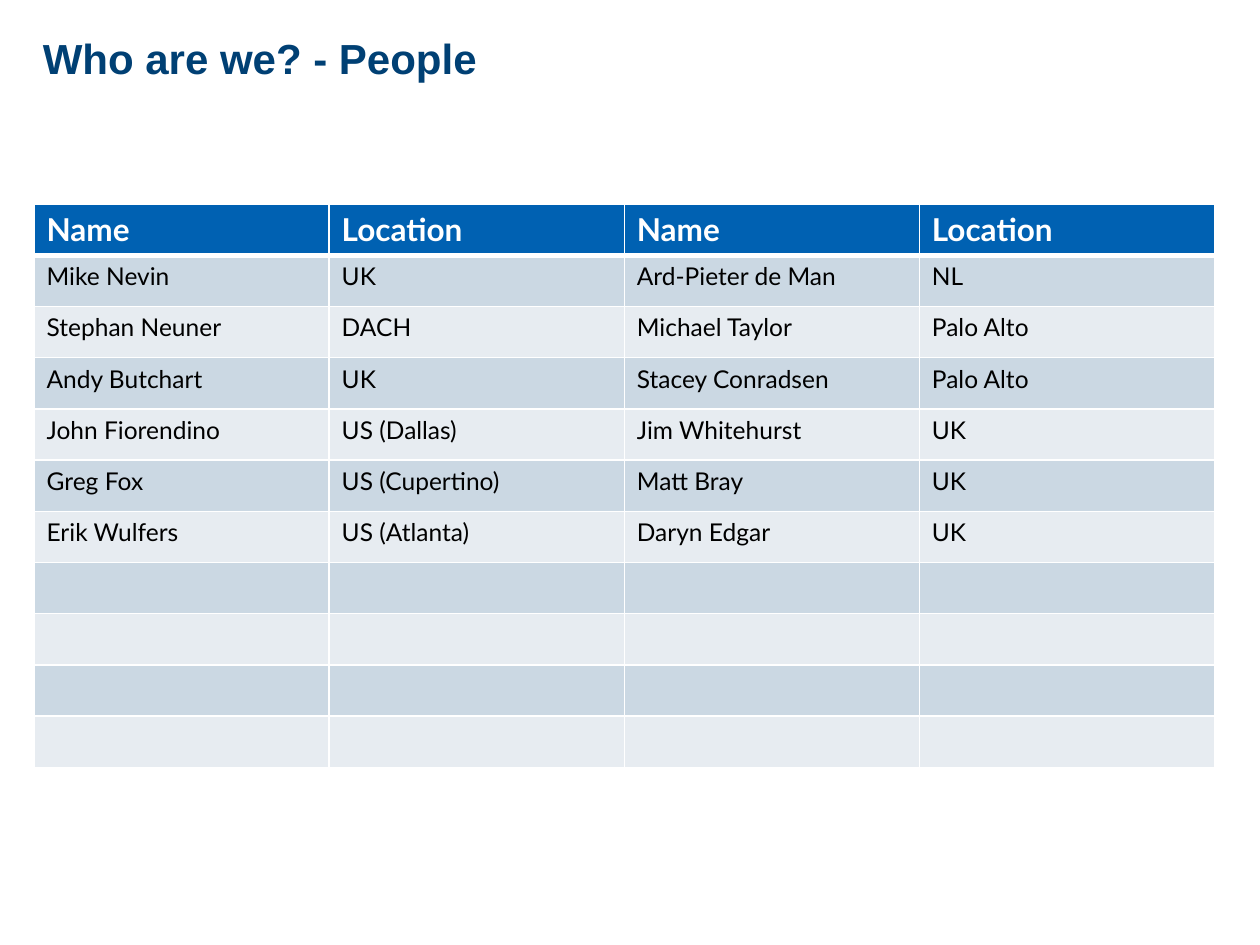
from pptx import Presentation
from pptx.dml.color import RGBColor
from pptx.enum import text as t
from pptx.oxml import parse_xml
from pptx.oxml.ns import nsdecls
from pptx.util import Inches, Pt

TITLE = "Who are we? - People"
HEAD = ("Name", "Location", "Name", "Location")
PEOPLE = [
    ("Mike Nevin", "UK", "Ard-Pieter de Man", "NL"),
    ("Stephan Neuner", "DACH", "Michael Taylor", "Palo Alto"),
    ("Andy Butchart", "UK", "Stacey Conradsen", "Palo Alto"),
    ("John Fiorendino", "US (Dallas)", "Jim Whitehurst", "UK"),
    ("Greg Fox", "US (Cupertino)", "Matt Bray", "UK"),
    ("Erik Wulfers", "US (Atlanta)", "Daryn Edgar", "UK"),
]
SPARE = 4
NAVY, BLUE, WHITE, BLACK = "004074", "0061B2", "FFFFFF", "000000"
BANDS = ("CBD8E3", "E7ECF1")
WIDTH, HEIGHT = 9.37, 4.47


def color(code):
    return RGBColor.from_string(code)


def write(frame, words, size=14, face="Lato", ink=BLACK, bold=False, space=None):
    para = frame.paragraphs[0]
    para.line_spacing = space
    run = para.add_run()
    run.text = words
    font = run.font
    font.size, font.name, font.bold = Pt(size), face, bold
    font.color.rgb = color(ink)


def border(cell, **sides):
    props = cell._tc.get_or_add_tcPr()
    for side, width in sides.items():
        props.append(parse_xml(
            f'<a:ln{side} {nsdecls("a")} w="{Pt(width)}"><a:solidFill>'
            f'<a:srgbClr val="{WHITE}"/></a:solidFill></a:ln{side}>'))


def add_title(slide):
    box = slide.shapes.add_textbox(Inches(0.34), Inches(0.15), Inches(6.83), Inches(0.66))
    frame = box.text_frame
    frame.word_wrap = True
    frame.margin_left = frame.margin_right = 0
    frame.vertical_anchor = t.MSO_ANCHOR.MIDDLE
    write(frame, TITLE, size=24, face="Arial", ink=NAVY, bold=True, space=0.95)


def add_people(slide):
    rows = [HEAD] + PEOPLE + [("",) * len(HEAD)] * SPARE
    table = slide.shapes.add_table(
        len(rows), len(HEAD), Inches(0.27), Inches(1.62), Inches(WIDTH), Inches(HEIGHT)).table
    for col in table.columns:
        col.width = Inches(WIDTH / len(HEAD))
    for r, row in enumerate(rows):
        table.rows[r].height = Inches(HEIGHT / len(rows))
        head = r == 0
        style = dict(size=18, ink=WHITE, bold=True) if head else {}
        for c, words in enumerate(row):
            cell = table.cell(r, c)
            border(cell, L=1, R=1, T=3 if r == 1 else 1, B=3 if head else 1)
            cell.fill.solid()
            cell.fill.fore_color.rgb = color(BLUE if head else BANDS[(r - 1) % 2])
            if words:
                write(cell.text_frame, words, **style)


def main():
    deck = Presentation()
    deck.slide_width, deck.slide_height = Inches(10), Inches(7.5)
    slide = deck.slides.add_slide(deck.slide_layouts[6])
    add_title(slide)
    add_people(slide)
    deck.save("out.pptx")


if __name__ == "__main__":
    main()
